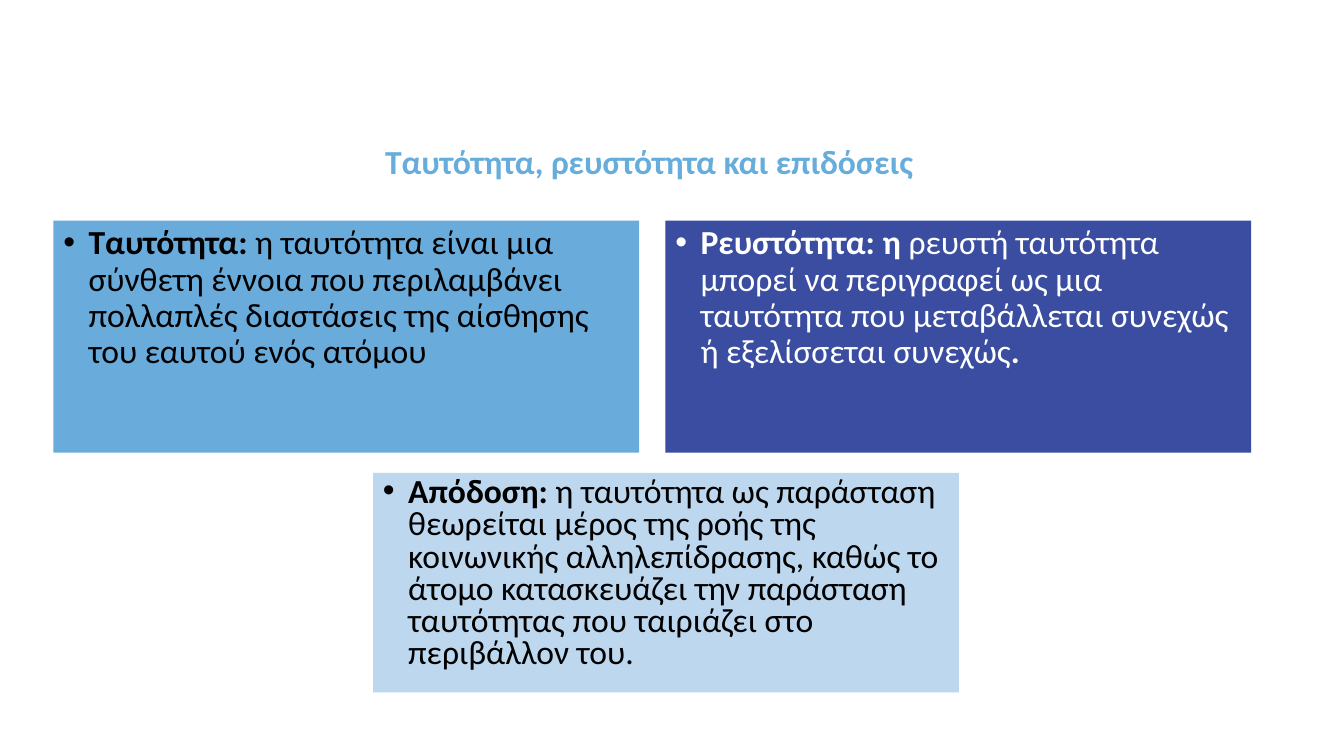
import pptx
import pptx.util
import pptx.dml.color
import pptx.enum.shapes
import pptx.enum.text
from lxml import etree

Inches = pptx.util.Inches
Pt = pptx.util.Pt
RGBColor = pptx.dml.color.RGBColor

BLACK = RGBColor(0x00, 0x00, 0x00)
WHITE = RGBColor(0xFF, 0xFF, 0xFF)
TITLE_BLUE = RGBColor(0x67, 0xAD, 0xDB)
SKY_BLUE = RGBColor(0x69, 0xAB, 0xDB)
INDIGO = RGBColor(0x3A, 0x4D, 0xA0)
PALE_BLUE = RGBColor(0xBD, 0xD7, 0xEE)

LEFT, CARD_WIDTH, COLUMN_STEP = 0.53, 5.81, 6.07
TOP_ROW, TOP_HEIGHT = 2.19, 2.3


class SlideBuilder:
    font_name = "Calibri"
    font_size = Pt(24)

    def __init__(self, deck):
        self.page = deck.slides.add_slide(deck.slide_layouts[5])

    def set_font(self, font, color):
        font.name = self.font_name
        font.size = self.font_size
        font.color.rgb = color

    def title(self, text, left, top, width, height):
        box = self.page.shapes.title
        box.left, box.top = Inches(left), Inches(top)
        box.width, box.height = Inches(width), Inches(height)
        frame = box.text_frame
        frame.text = text
        frame.word_wrap = True
        frame.auto_size = pptx.enum.text.MSO_AUTO_SIZE.NONE
        frame.vertical_anchor = pptx.enum.text.MSO_ANCHOR.MIDDLE
        para = frame.paragraphs[0]
        para.alignment = pptx.enum.text.PP_ALIGN.CENTER
        para.line_spacing = 0.9
        self.set_font(para.font, TITLE_BLUE)
        para.font.bold = True

    def bullet(self, para):
        properties = para._p.get_or_add_pPr()
        properties.set("marL", str(Inches(0.25)))
        properties.set("indent", str(-Inches(0.25)))
        namespace = pptx.oxml.ns.qn("a:buFont").replace("buFont", "")
        etree.SubElement(properties, namespace + "buFont", typeface="Arial")
        etree.SubElement(properties, namespace + "buChar", char="•")

    def card(self, spans, left, top, height, fill, color, spacing=0.9):
        """Filled rectangle with one bullet; spans are (text, bold) pairs."""
        box = self.page.shapes.add_shape(
            pptx.enum.shapes.MSO_SHAPE.RECTANGLE,
            Inches(left), Inches(top), Inches(CARD_WIDTH), Inches(height))
        box.shadow.inherit = False
        box.fill.solid()
        box.fill.fore_color.rgb = fill
        box.line.fill.background()
        frame = box.text_frame
        frame.word_wrap = True
        frame.vertical_anchor = pptx.enum.text.MSO_ANCHOR.TOP
        para = frame.paragraphs[0]
        self.bullet(para)
        para.alignment = pptx.enum.text.PP_ALIGN.LEFT
        para.line_spacing = spacing
        self.set_font(para.font, color)
        for text, bold in spans:
            span = para.add_run()
            span.text = text
            span.font.bold = bold


def main():
    deck = pptx.Presentation()
    deck.slide_width, deck.slide_height = Inches(13.33), Inches(7.5)
    slide = SlideBuilder(deck)

    # Title
    slide.title("Ταυτότητα, ρευστότητα και επιδόσεις ", LEFT, 1.25, 11.89, 0.74)

    # Upper row: identity and fluidity
    upper_cards = [
        ([("Ταυτότητα: ", True),
          ("η ταυτότητα είναι μια σύνθετη έννοια που περιλαμβάνει πολλαπλές "
           "διαστάσεις της αίσθησης του εαυτού ενός ατόμου", False)],
         SKY_BLUE, BLACK),
        ([("Ρευστότητα: η ", True),
          ("ρευστή ταυτότητα μπορεί να περιγραφεί ως μια ταυτότητα που "
           "μεταβάλλεται συνεχώς ή εξελίσσεται συνεχώς", False),
          (".", True)],
         INDIGO, WHITE),
    ]
    for column, (spans, fill, color) in enumerate(upper_cards):
        slide.card(spans, LEFT + column * COLUMN_STEP, TOP_ROW, TOP_HEIGHT,
                   fill, color)

    # Lower card: performance
    slide.card(
        [("Απόδοση: ", True),
         ("η ταυτότητα ως παράσταση θεωρείται μέρος της ροής της κοινωνικής "
          "αλληλεπίδρασης, καθώς το άτομο κατασκευάζει την παράσταση "
          "ταυτότητας που ταιριάζει στο περιβάλλον του.", False)],
        3.7, 4.69, 2.18, PALE_BLUE, BLACK, spacing=0.8)

    deck.save("out.pptx")


if __name__ == "__main__":
    main()
